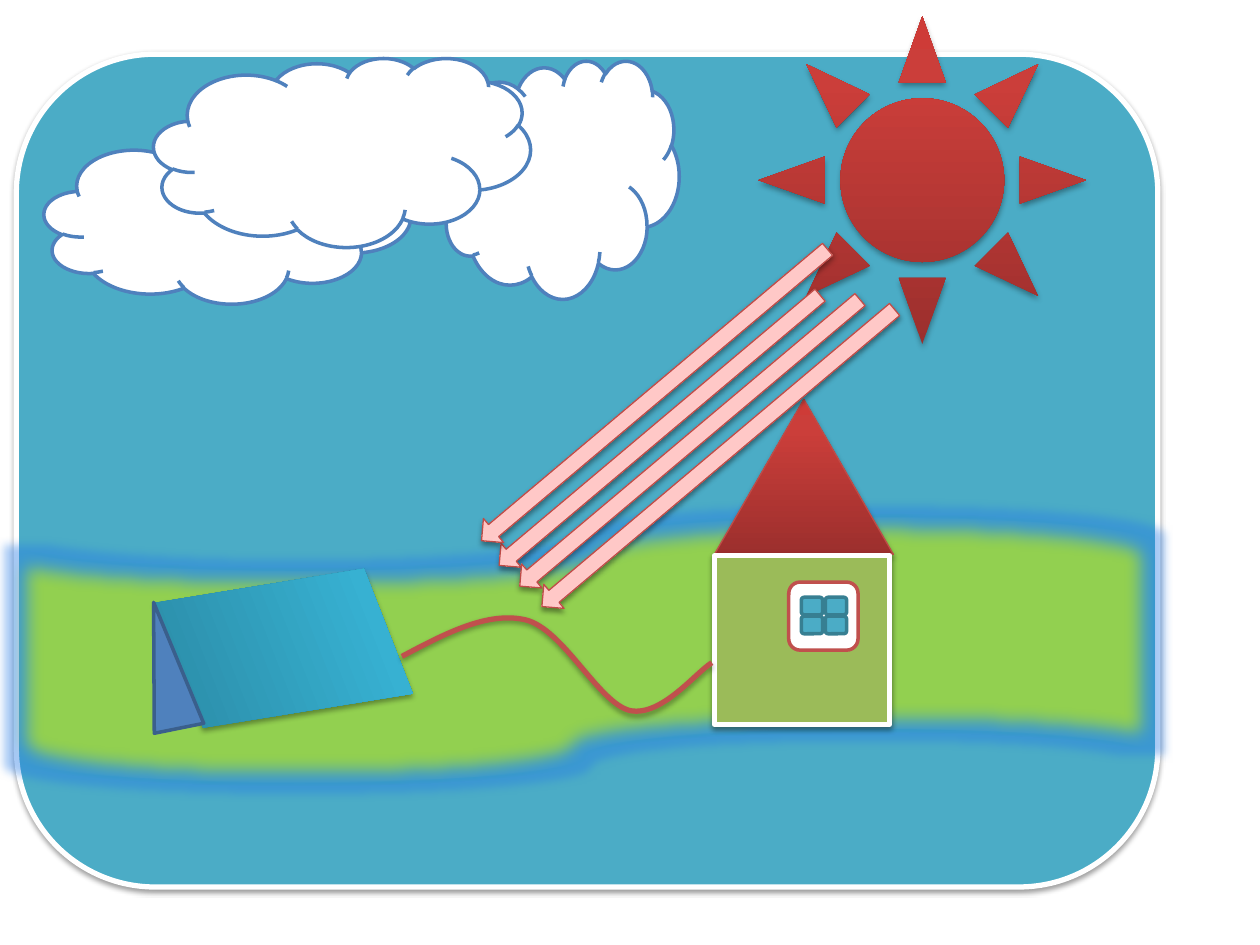
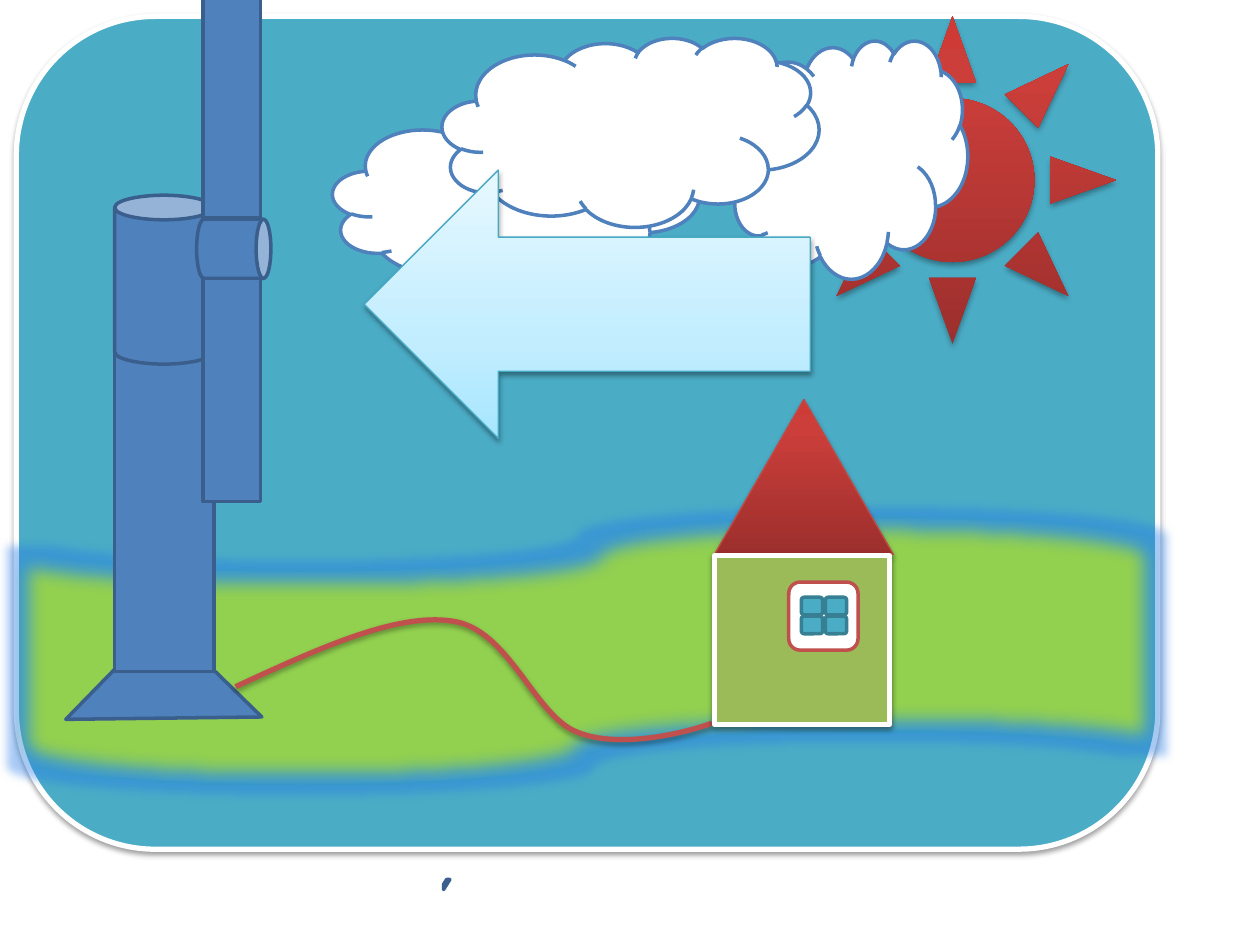
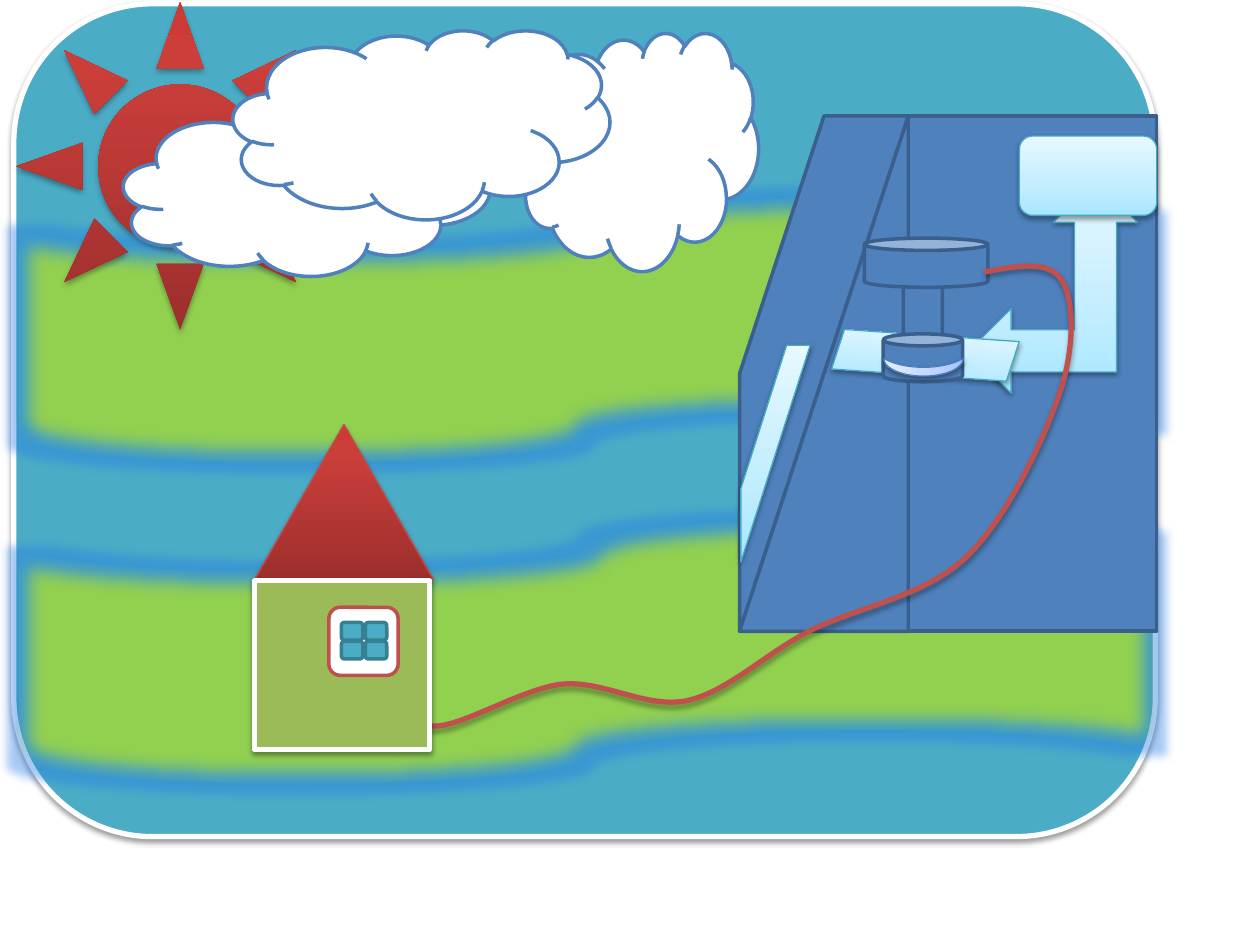
import itertools

import pptx
import pptx.dml.color
import pptx.enum.shapes
import pptx.oxml
import pptx.oxml.ns
import pptx.util

KIND = pptx.enum.shapes.MSO_SHAPE
Inches = pptx.util.Inches
Pt = pptx.util.Pt
qn = pptx.oxml.ns.qn

COLOURS = {
    "white": "FFFFFF", "sky": "4BACC6", "pane edge": "377F92",
    "grass": "92D050", "grass edge": "00B050", "glow": "257AE6",
    "steel": "4F81BD", "steel edge": "3A5F8C", "moon edge": "4B7EBC",
    "wall": "9BBB59", "wire": "C0504D", "red edge": "BF4C48",
    "water edge": "46AAC5", "shade": "000000",
}
# Gradients run from the bottom of the shape to its top: (percent, colour)
GRADIENTS = {
    "red": [(0, "9C2F2D"), (80, "CB3E3A"), (100, "CE3B37")],
    "panel": [(0, "2A88A2"), (80, "37B1D2"), (100, "34B4D6")],
    "ray": [(0, "FFA6A5"), (35, "FFC0BF"), (100, "FFE7E7")],
    "water": [(0, "A7E6FF"), (35, "C1EDFF"), (100, "E7F8FF")],
    "pale blue": [(0, "A4C4FF"), (35, "BFD4FF"), (100, "E6EEFF")],
}
# Shadows: opacity in percent, distance in points
SHADOWS = {"near": (38, 1.6), "far": (35, 1.8)}
# Styles: fill, line colour, line width, shadow
STYLES = {
    "sky": ("sky", "white", 3, "near"),
    "grass": ("grass", "grass edge", 2, None),
    "sun": ("red", None, 0, "far"),
    "cloud": ("white", "steel", 2, None),
    "roof": ("red", "red edge", 0.75, "far"),
    "wall": ("wall", "white", 3, "near"),
    "window": ("white", "wire", 2, None),
    "pane": ("sky", "pane edge", 2, None),
    "steel": ("steel", "steel edge", 2, None),
    "panel": ("panel", None, 0, "far"),
    "ray": ("ray", "red edge", 0.75, "near"),
    "water": ("water", "water edge", 0.75, "near"),
    "moon": ("pale blue", "moon edge", 0.75, "near"),
    "wire": (None, "wire", 3, "far"),
}


def rgb(name):
    return pptx.dml.color.RGBColor.from_string(COLOURS[name])


def add_xml(parent, tag, **attributes):
    child = parent.makeelement(qn(tag), {k: str(v) for k, v in attributes.items()})
    parent.append(child)
    return child


def fill_gradient(shape, stops):
    shape.fill.gradient()
    shape.fill.gradient_angle = 90
    stop_list = shape.element.spPr.find(qn("a:gradFill")).find(qn("a:gsLst"))
    for stop in list(stop_list):
        stop_list.remove(stop)
    for percent, colour in stops:
        stop = add_xml(stop_list, "a:gs", pos=percent * 1000)
        add_xml(stop, "a:srgbClr", val=colour)


def add_effect(shape, tag, colour, opacity, **attributes):
    effects = shape.element.spPr.find(qn("a:effectLst"))
    effect = add_xml(effects, tag, **attributes)
    tint = add_xml(effect, "a:srgbClr", val=COLOURS[colour])
    add_xml(tint, "a:alpha", val=opacity * 1000)


def apply_style(shape, style):
    fill, line, width, shadow = STYLES[style]
    shape.shadow.inherit = False
    if fill is None:
        shape.fill.background()
    elif fill in GRADIENTS:
        fill_gradient(shape, GRADIENTS[fill])
    else:
        shape.fill.solid()
        shape.fill.fore_color.rgb = rgb(fill)
    if line is None:
        shape.line.fill.background()
    else:
        shape.line.color.rgb = rgb(line)
        shape.line.width = Pt(width)
    if shadow:
        opacity, distance = SHADOWS[shadow]
        add_effect(shape, "a:outerShdw", "shade", opacity, blurRad=Pt(3.1),
                   dist=Pt(distance), dir=90 * 60000, rotWithShape=0)


def draw(shapes, origin, kind, box, style, turn=0):
    """Add a preset shape whose box is measured in inches from the origin."""
    left, top, width, height = box
    shape = shapes.add_shape(kind, Inches(origin[0] + left), Inches(origin[1] + top),
                             Inches(width), Inches(height))
    shape.rotation = turn
    apply_style(shape, style)
    return shape


def new_group(page):
    return page.shapes.add_group_shape().shapes


def draw_sky(page, origin):
    draw(page.shapes, origin, KIND.ROUNDED_RECTANGLE, (0, 0, 9.06, 6.61), "sky")


def draw_grass(page, origin):
    band = draw(page.shapes, origin, KIND.WAVE, (0, 0, 9.05, 2.13), "grass")
    geometry = band.element.spPr.find(qn("a:prstGeom"))
    geometry.set("prst", "flowChartPunchedTape")
    guides = geometry.find(qn("a:avLst"))
    for guide in list(guides):
        guides.remove(guide)
    add_effect(band, "a:glow", "glow", 40, rad=Pt(11))
    add_xml(band.element.spPr.find(qn("a:effectLst")), "a:softEdge", rad=Pt(10))


def draw_sun(page, origin):
    draw(page.shapes, origin, KIND.SUN, (0, 0, 2.6, 2.6), "sun")


def draw_clouds(page, origin):
    group = new_group(page)
    for box in [(3.15, 0.02, 1.89, 1.89), (0, 0.61, 2.91, 1.34), (0.87, 0, 2.99, 1.5)]:
        draw(group, origin, KIND.CLOUD, box, "cloud")


def draw_house(page, origin):
    group = new_group(page)
    draw(group, origin, KIND.ISOSCELES_TRIANGLE, (0, 0, 1.42, 1.23), "roof")
    draw(group, origin, KIND.RECTANGLE, (0, 1.24, 1.39, 1.34), "wall")
    draw(group, origin, KIND.ROUNDED_RECTANGLE, (0.59, 1.45, 0.55, 0.54), "window")
    for left, top in itertools.product((0.69, 0.88), (1.57, 1.72)):
        draw(group, origin, KIND.ROUNDED_RECTANGLE, (left, top, 0.17, 0.14), "pane")


def draw_wire(page, points):
    """Draw a curve through a start point and then two handles and an end per bend."""
    emu = [(Inches(x), Inches(y)) for x, y in points]
    builder = page.shapes.build_freeform(*emu[0])
    builder.add_line_segments(emu[1:], close=False)
    wire = builder.convert_to_shape()
    outline = next(wire.element.iter(qn("a:path")))
    lines = outline.findall(qn("a:lnTo"))
    for start in range(0, len(lines), 3):
        curve = add_xml(outline, "a:cubicBezTo")
        for line in lines[start:start + 3]:
            curve.append(line[0])
            outline.remove(line)
    apply_style(wire, "wire")


def draw_solar_panel(page, origin):
    draw(page.shapes, origin, KIND.PARALLELOGRAM, (0.42, 0, 1.42, 1.65), "panel", 68.6)
    draw(page.shapes, origin, KIND.ISOSCELES_TRIANGLE, (0, 0.45, 0.4, 1.02), "steel", 348.6)


def draw_sun_rays(page, origin):
    for left, top, length in [(0.17, 0.28, 3.33), (0.31, 0.38, 3.53),
                              (0.47, 0.5, 3.66), (0, 0, 3.59)]:
        draw(page.shapes, origin, KIND.RIGHT_ARROW, (left, top, length, 0.25), "ray", 139.9)


def draw_wind_turbine(page, origin):
    group = new_group(page)
    draw(group, origin, KIND.DIAGONAL_STRIPE, (0, 5.15, 1.1, 1.1), "steel", 44.3)
    draw(group, origin, KIND.RECTANGLE, (0.16, 2.65, 0.79, 2.68), "steel")
    draw(group, origin, KIND.CAN, (0.16, 1.55, 0.78, 1.34), "steel")
    draw(group, origin, KIND.CAN, (0.87, 1.68, 0.47, 0.59), "steel", 90)
    for top in (2.21, -0.04):
        draw(group, origin, KIND.RECTANGLE, (0.86, top, 0.46, 1.77), "steel")


def draw_dam(page, origin):
    group = new_group(page)
    side = (0, 0, 1.34, 4.09)
    draw(group, origin, KIND.DIAGONAL_STRIPE, side, "steel")
    slope = draw(group, origin, KIND.RIGHT_TRIANGLE, side, "steel")
    slope.element.spPr.find(qn("a:xfrm")).set("flipH", "1")
    draw(group, origin, KIND.RECTANGLE, (1.34, 0, 1.97, 4.09), "steel")


def draw_water_flow(page, origin):
    group = new_group(page)
    gate = draw(group, origin, KIND.DIAGONAL_STRIPE, (0.01, 1.82, 0.55, 1.72), "water")
    gate.adjustments[0] = 0.661
    draw(group, origin, KIND.LEFT_UP_ARROW, (1.82, 0.51, 1.34, 1.69), "water")
    draw(group, origin, KIND.PARALLELOGRAM, (0.74, 1.74, 1.47, 0.32), "water", 4)
    draw(group, origin, KIND.ROUNDED_RECTANGLE, (2.22, 0.16, 1.09, 0.63), "water")


def draw_generator(page, origin):
    group = new_group(page)
    for box in [(0.31, 0.23, 0.31, 0.61), (0, 0, 0.98, 0.39), (0.15, 0.76, 0.63, 0.38)]:
        draw(group, origin, KIND.CAN, box, "steel")
    draw(group, origin, KIND.MOON, (0.4, 0.71, 0.14, 0.63), "moon", 270)


def solar_slide(page):
    draw_sky(page, (0.13, 0.43))
    draw_sun(page, (6.02, 0.13))
    draw_clouds(page, (0.35, 0.46))
    draw_grass(page, (0.11, 4.09))
    draw_solar_panel(page, (1.12, 4.32))
    draw_house(page, (5.67, 3.17))
    draw_wire(page, [(3.19, 5.21), (3.53, 5.03), (3.87, 4.85), (4.17, 4.92),
                     (4.47, 4.99), (4.75, 5.58), (5, 5.64),
                     (5.25, 5.69), (5.52, 5.34), (5.65, 5.26)])
    draw_sun_rays(page, (3.4, 3.01))


def wind_slide(page):
    draw_sky(page, (0.13, 0.13))
    draw_grass(page, (0.13, 4.1))
    draw_sun(page, (6.26, 0.13))
    draw_clouds(page, (2.64, 0.3))
    draw(page.shapes, (3.52, 6.98), KIND.DIAGONAL_STRIPE, (0, 0, 0.05, 0.08), "steel")
    draw_wind_turbine(page, (0.75, 0))
    draw(page.shapes, (2.89, 1.35), KIND.LEFT_ARROW, (0, 0, 3.54, 2.13), "water")
    draw_wire(page, [(1.87, 5.45), (2.5, 5.16), (3.14, 4.86), (3.59, 4.93),
                     (4.04, 4.99), (4.24, 5.68), (4.58, 5.81),
                     (4.92, 5.95), (5.46, 5.81), (5.65, 5.74)])
    draw_house(page, (5.67, 3.17))


def hydro_slide(page):
    draw_sky(page, (0.11, 0.03))
    for top in (4.1, 1.55):
        draw_grass(page, (0.13, top))
    draw_dam(page, (5.87, 0.92))
    draw_sun(page, (0.13, 0.02))
    draw_clouds(page, (0.98, 0.24))
    draw_water_flow(page, (5.87, 0.92))
    draw_generator(page, (6.86, 1.89))
    draw_wire(page, [(7.81, 2.16), (8.07, 2.11), (8.33, 2.06), (8.43, 2.23),
                     (8.53, 2.39), (8.53, 2.79), (8.4, 3.15),
                     (8.27, 3.52), (7.99, 4.12), (7.66, 4.43),
                     (7.34, 4.73), (6.81, 4.82), (6.44, 5),
                     (6.07, 5.19), (5.79, 5.48), (5.46, 5.56),
                     (5.13, 5.63), (4.8, 5.4), (4.46, 5.43),
                     (4.12, 5.47), (3.62, 5.8), (3.41, 5.76)])
    draw_house(page, (2.02, 3.37))


def main():
    deck = pptx.Presentation()
    deck.slide_width, deck.slide_height = Inches(10), Inches(7.5)
    for build in (solar_slide, wind_slide, hydro_slide):
        build(deck.slides.add_slide(deck.slide_layouts[6]))
    deck.save("out.pptx")


if __name__ == "__main__":
    main()
